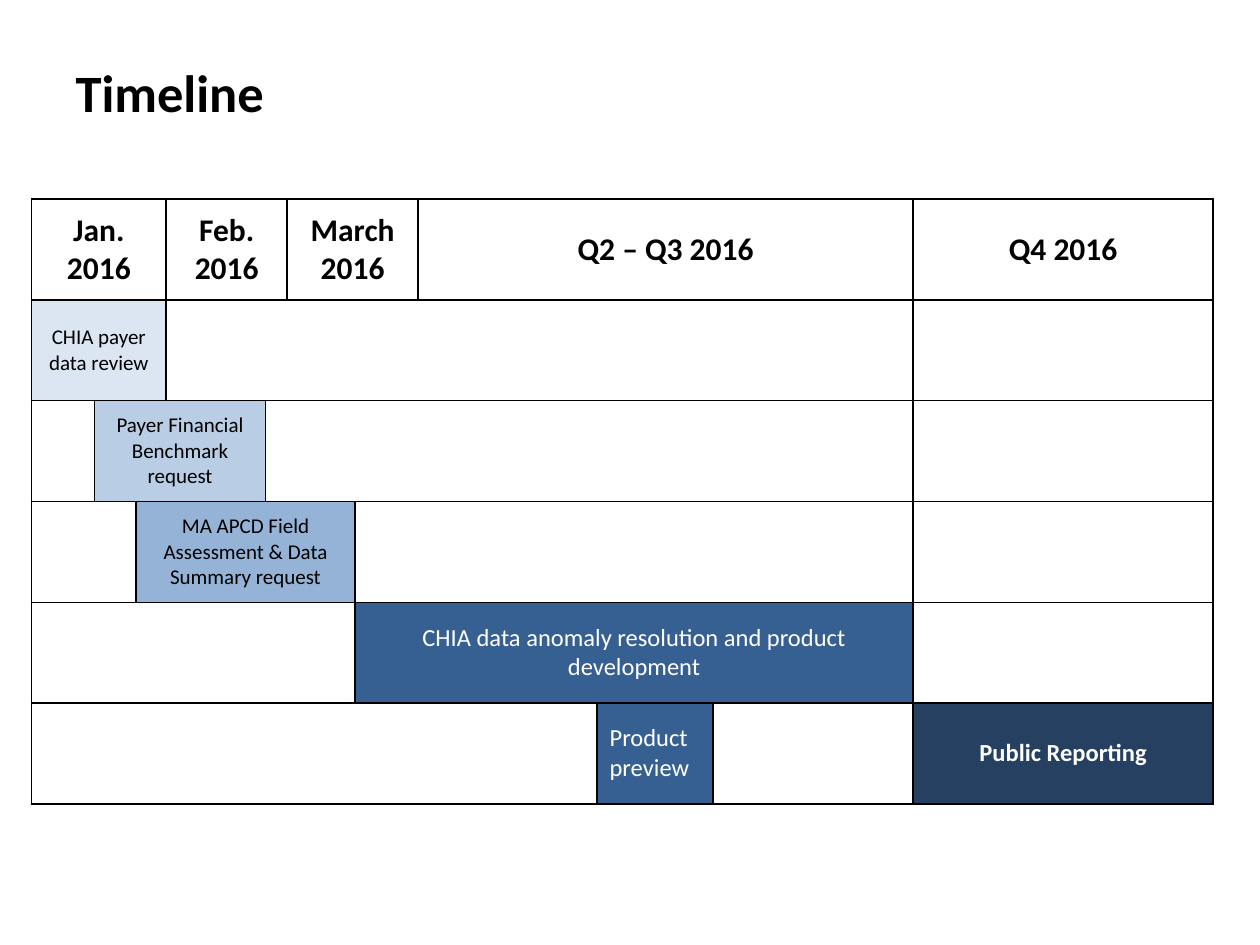
from dataclasses import dataclass

from lxml.etree import SubElement
from pptx import Presentation
from pptx.dml.color import RGBColor
from pptx.enum.text import MSO_ANCHOR, PP_ALIGN
from pptx.oxml.ns import qn
from pptx.util import Inches, Pt

FONT = "Calibri"
BLACK = RGBColor(0x00, 0x00, 0x00)
WHITE = RGBColor(0xFF, 0xFF, 0xFF)
PALE_BLUE = RGBColor(0xDC, 0xE6, 0xF2)
LIGHT_BLUE = RGBColor(0xB9, 0xCD, 0xE5)
MEDIUM_BLUE = RGBColor(0x95, 0xB3, 0xD7)
STRONG_BLUE = RGBColor(0x37, 0x60, 0x92)
NAVY = RGBColor(0x25, 0x40, 0x61)

COLUMN_WIDTHS = [0.5, 0.33, 0.13, 0.79, 0.17, 0.54, 0.5, 1.42, 0.92, 1.59, 2.38]
ROW_HEIGHT = 0.8


@dataclass
class Block:
    """A stretch of one timeline row, measured in table columns."""

    span: int
    text: str = ""
    fill: RGBColor = WHITE
    color: RGBColor = BLACK
    size: int = 12
    bold: bool = False
    align: PP_ALIGN = PP_ALIGN.CENTER


def heading(span, text):
    """Return a period heading."""
    return Block(span, text, size=18, bold=True)


def late_phase(span, text, fill=STRONG_BLUE, **options):
    """Return a dark block with white text."""
    return Block(span, text, fill, WHITE, 14, **options)


TIMELINE = [
    [heading(3, "Jan. 2016"), heading(2, "Feb. 2016"), heading(2, "March 2016"),
     heading(3, "Q2 – Q3 2016"), heading(1, "Q4 2016")],
    [Block(3, "CHIA payer data review", PALE_BLUE), Block(7), Block(1)],
    [Block(1), Block(3, "Payer Financial Benchmark request", LIGHT_BLUE),
     Block(6), Block(1)],
    [Block(2), Block(4, "MA APCD Field Assessment & Data Summary request", MEDIUM_BLUE),
     Block(4), Block(1)],
    [Block(6), late_phase(4, "CHIA data anomaly resolution and product development"),
     Block(1)],
    [Block(8), late_phase(1, "Product preview", align=PP_ALIGN.LEFT), Block(1),
     late_phase(1, "Public Reporting", NAVY, bold=True)],
]


def format_text(text_frame, size, color, bold, align):
    """Apply one font and alignment to all the text of a frame."""
    for paragraph in text_frame.paragraphs:
        paragraph.alignment = align
        for run in paragraph.runs:
            run.font.name = FONT
            run.font.size = Pt(size)
            run.font.bold = bold
            run.font.color.rgb = color


def add_title(slide, text):
    """Place the slide title."""
    title = slide.shapes.title
    title.left, title.top = Inches(0.5), Inches(0.42)
    title.width, title.height = Inches(8.5), Inches(0.61)
    title.text_frame.text = text
    title.text_frame.vertical_anchor = MSO_ANCHOR.MIDDLE
    format_text(title.text_frame, 30, BLACK, True, PP_ALIGN.LEFT)


def style_cell(cell, fill):
    """Give a cell its fill and a thin black border."""
    cell.fill.solid()
    cell.fill.fore_color.rgb = fill
    properties = cell._tc.get_or_add_tcPr()
    for position, side in enumerate(("a:lnL", "a:lnR", "a:lnT", "a:lnB")):
        line = SubElement(properties, qn(side), w=str(Pt(1)))
        solid_fill = SubElement(line, qn("a:solidFill"))
        SubElement(solid_fill, qn("a:srgbClr"), val=str(BLACK))
        properties.insert(position, line)


def add_block(table, row, column, block):
    """Fill the cells of one block, merging them where it spans several."""
    last = column + block.span - 1
    for index in range(column, last + 1):
        style_cell(table.cell(row, index), block.fill)
    cell = table.cell(row, column)
    if block.span > 1:
        cell.merge(table.cell(row, last))
    cell.vertical_anchor = MSO_ANCHOR.MIDDLE
    if block.text:
        cell.text_frame.text = block.text
        format_text(cell.text_frame, block.size, block.color, block.bold, block.align)


def add_timeline(slide):
    """Build the timeline table."""
    frame = slide.shapes.add_table(
        len(TIMELINE), len(COLUMN_WIDTHS), Inches(0.25), Inches(1.58),
        Inches(sum(COLUMN_WIDTHS)), Inches(ROW_HEIGHT * len(TIMELINE)))
    table = frame.table
    table.first_row = False
    table.horz_banding = False
    for column, width in zip(table.columns, COLUMN_WIDTHS):
        column.width = Inches(width)
    for row, blocks in enumerate(TIMELINE):
        table.rows[row].height = Inches(ROW_HEIGHT)
        column = 0
        for block in blocks:
            add_block(table, row, column, block)
            column += block.span


def main():
    """Build and save the timeline slide."""
    presentation = Presentation()
    presentation.slide_width = Inches(10)
    presentation.slide_height = Inches(7.5)
    slide = presentation.slides.add_slide(presentation.slide_layouts[5])
    add_title(slide, "Timeline")
    add_timeline(slide)
    presentation.save("out.pptx")


if __name__ == "__main__":
    main()
